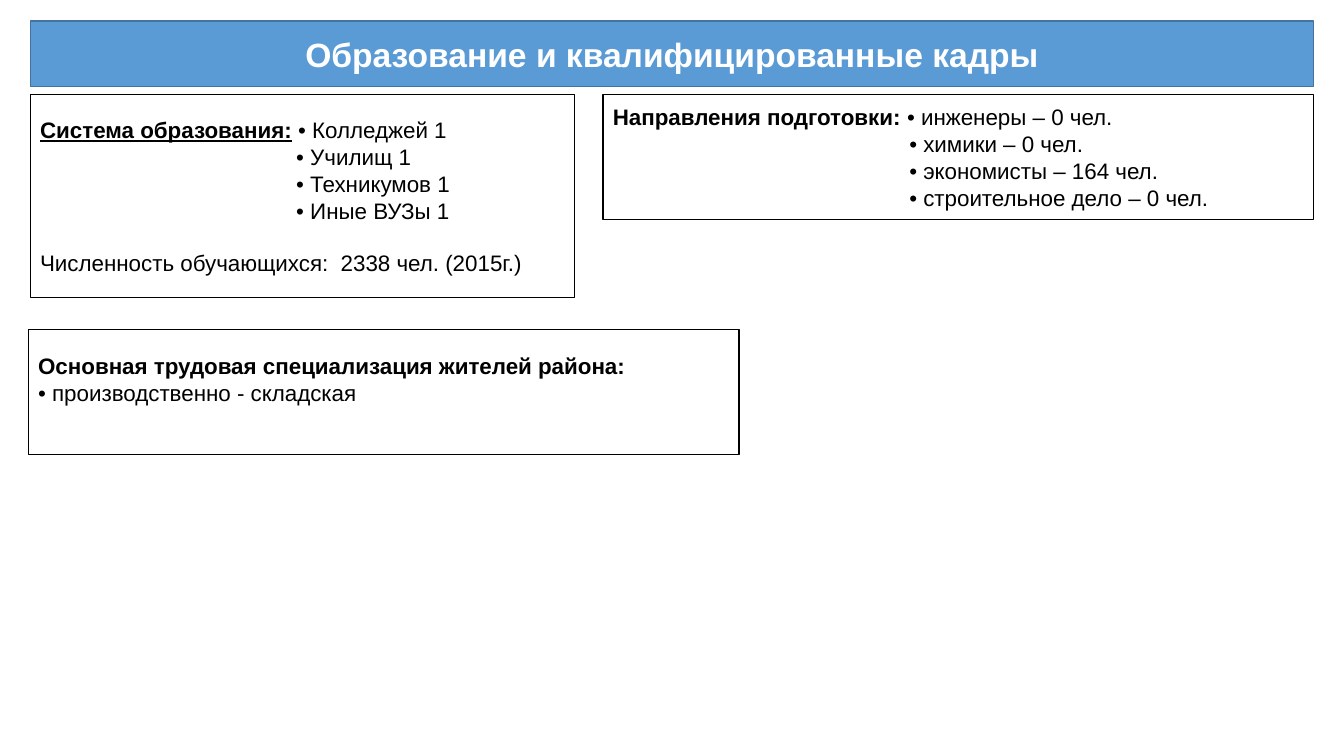
from pptx import Presentation
from pptx.dml.color import RGBColor
from pptx.enum.shapes import MSO_SHAPE as Preset
from pptx.enum.text import MSO_ANCHOR as Anchor, PP_ALIGN as Align
from pptx.util import Inches, Pt

BLUE = RGBColor(0x5B, 0x9B, 0xD5)
DARK_BLUE = RGBColor(0x43, 0x73, 0x9E)
BLACK = RGBColor(0, 0, 0)
WHITE = RGBColor(0xFF, 0xFF, 0xFF)

LINE_HEIGHT = 18.4

TITLE = "Образование и квалифицированные кадры"
TITLE_BOX = (0.3, 0.21, 12.73, 0.65)

SECTIONS = [
    {
        "box": (0.3, 0.94, 5.4, 2.01),
        "heading": "Система образования:",
        "underline": True,
        "beside": "• Колледжей 1",
        "items": ["• Училищ 1", "• Техникумов 1", "• Иные ВУЗы 1"],
        "indent": 2.54,
        "total": "Численность обучающихся:  2338 чел. (2015г.)",
    },
    {
        "box": (5.98, 0.94, 7.05, 1.24),
        "heading": "Направления подготовки:",
        "beside": "• инженеры – 0 чел.",
        "items": ["• химики – 0 чел.", "• экономисты – 164 чел.",
                  "• строительное дело – 0 чел."],
        "indent": 2.94,
    },
    {
        "box": (0.28, 3.27, 7.05, 1.24),
        "heading": "Основная трудовая специализация жителей района:",
        "items": ["• производственно - складская"],
        "indent": 0,
        "bottom": 0.31,
    },
]


def add_box(slide, box, line_color, fill_color=None):
    frame = slide.shapes.add_shape(Preset.RECTANGLE, *map(Inches, box))
    frame.shadow.inherit = False
    if fill_color is None:
        frame.fill.background()
    else:
        frame.fill.solid()
        frame.fill.fore_color.rgb = fill_color
    frame.line.color.rgb = line_color
    frame.line.width = Pt(1)
    text = frame.text_frame
    text.word_wrap = True
    text.vertical_anchor = Anchor.MIDDLE
    return text


def add_run(paragraph, words, size=16, color=BLACK, bold=False, underline=False):
    run = paragraph.add_run()
    run.text = words
    run.font.name = "Arial"
    run.font.size = Pt(size)
    run.font.color.rgb = color
    run.font.bold = bold
    run.font.underline = underline


def add_line(text, words, indent=0):
    paragraph = text.add_paragraph()
    paragraph.alignment = Align.LEFT
    properties = paragraph._p.get_or_add_pPr()
    properties.set("marL", str(Inches(indent)))
    properties.set("indent", "0")
    add_run(paragraph, words)
    return paragraph


def add_section(slide, section):
    text = add_box(slide, section["box"], BLACK)
    text.margin_bottom = Inches(section.get("bottom", 0.05))
    opening = text.paragraphs[0]
    opening.alignment = Align.LEFT
    add_run(opening, section["heading"], bold=True,
            underline=section.get("underline", False))
    if "beside" in section:
        add_run(opening, " ", bold=True)
        add_run(opening, section["beside"])
    for item in section["items"]:
        add_line(text, item, section["indent"])
    if "total" in section:
        add_line(text, section["total"]).space_before = Pt(LINE_HEIGHT)


def main():
    deck = Presentation()
    deck.slide_width, deck.slide_height = Inches(13.33), Inches(7.5)
    slide = deck.slides.add_slide(deck.slide_layouts[6])
    title = add_box(slide, TITLE_BOX, DARK_BLUE, BLUE).paragraphs[0]
    title.alignment = Align.CENTER
    add_run(title, TITLE, 24, WHITE, bold=True)
    for section in SECTIONS:
        add_section(slide, section)
    deck.save("out.pptx")


if __name__ == "__main__":
    main()
